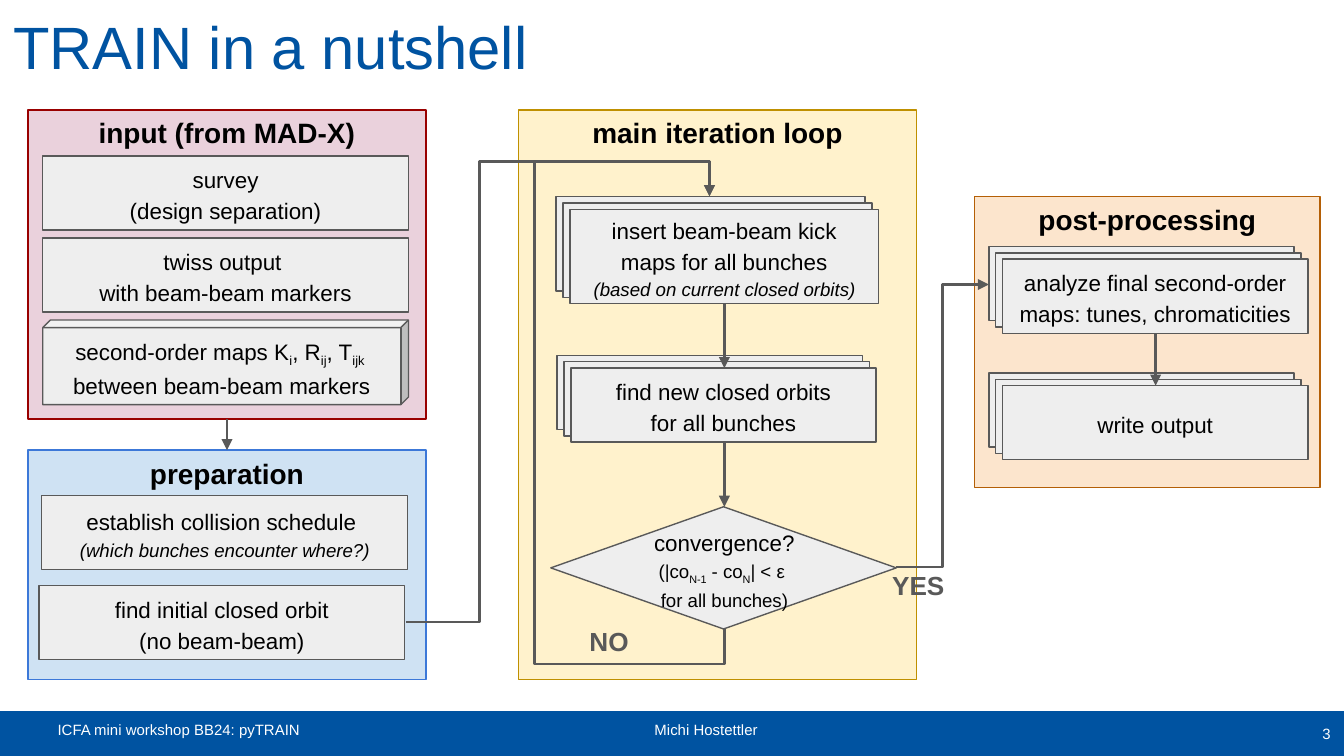
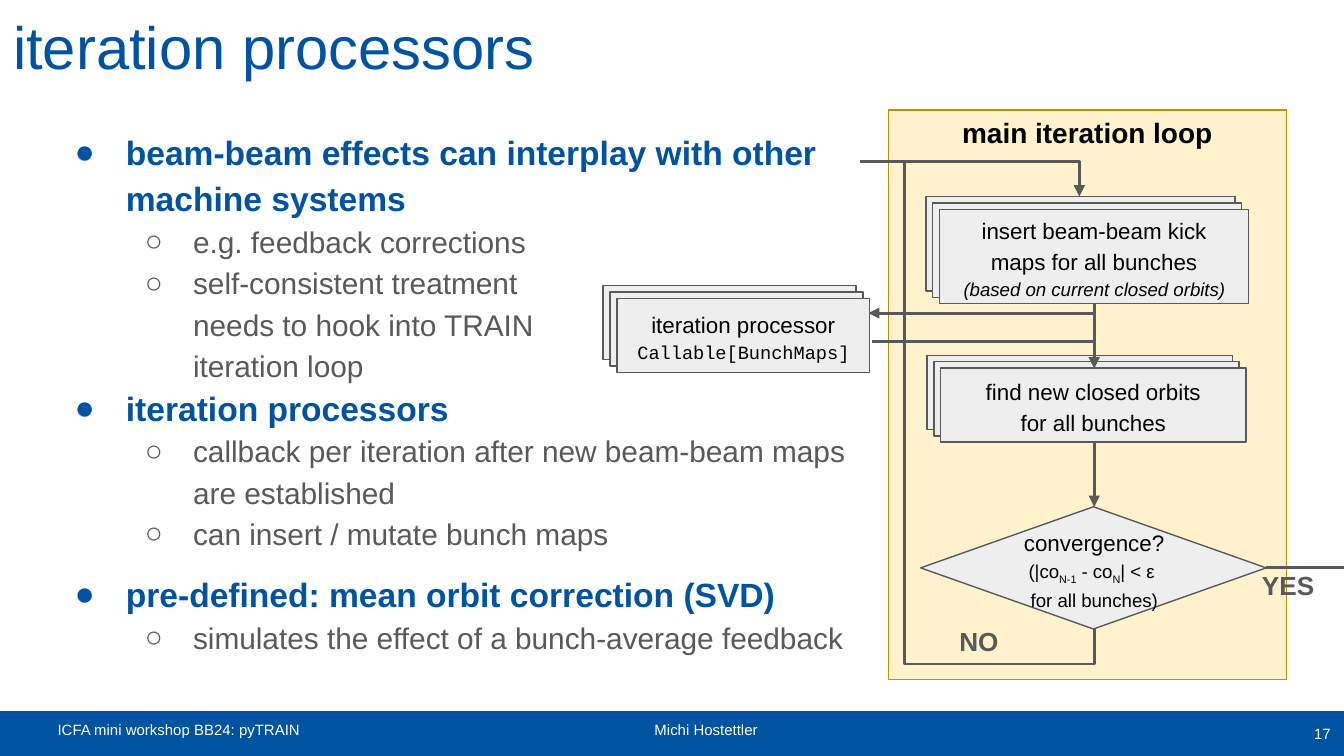
from copy import deepcopy
from dataclasses import dataclass

from lxml import etree
from pptx import Presentation
from pptx import util as u
from pptx.dml.color import RGBColor
from pptx.enum import shapes, text
from pptx.oxml.ns import qn

# Shared colours and fonts
BLUE = RGBColor(0x00, 0x53, 0xA1)
GREY = RGBColor(0x59, 0x59, 0x59)
BOX_FILL = RGBColor(0xEE, 0xEE, 0xEE)
BLACK = RGBColor(0, 0, 0)
WHITE = RGBColor(0xFF, 0xFF, 0xFF)
ROSE, DARK_RED = RGBColor(0xEA, 0xD1, 0xDC), RGBColor(0x99, 0, 0)
SKY, MID_BLUE = RGBColor(0xCF, 0xE2, 0xF3), RGBColor(0x3C, 0x78, 0xD8)
CREAM, GOLD = RGBColor(0xFF, 0xF2, 0xCC), RGBColor(0xBF, 0x90, 0)
PEACH, RUST = RGBColor(0xFC, 0xE5, 0xCD), RGBColor(0xB4, 0x5F, 0x06)
SANS, MONO = "Arial", "Courier New"

# Shared measures in centimetres
SLIDE_W, SLIDE_H = 25.4, 14.29
BAND_TOP, BAND_H = 13.46, 0.83
PANEL_W, PANEL_TOP, HEADING_H = 7.52, 2.08, 0.86
BOX_W, BOX_H = 6.91, 1.4
STACK_W = 5.77
STACK_STEP_X, STACK_STEP_Y = 0.13, 0.12
INSET = 0.25

LEFT, CENTER, RIGHT = text.PP_ALIGN.LEFT, text.PP_ALIGN.CENTER, text.PP_ALIGN.RIGHT
TOP, MIDDLE = text.MSO_ANCHOR.TOP, text.MSO_ANCHOR.MIDDLE
RECT = shapes.MSO_SHAPE.RECTANGLE


@dataclass
class Run:
    text: str
    size: float = 12
    color: RGBColor = BLACK
    bold: bool = False
    italic: bool = False
    baseline: int = 0
    font: str = SANS


def note(words):
    return Run(words, size=10, italic=True)


def sub(words, size=12):
    return Run(words, size=size, baseline=-25000)


def cm(*lengths):
    return [u.Cm(length) for length in lengths]


# Text
def add_runs(paragraph, runs):
    for item in runs:
        for number, line in enumerate(item.text.split("\n")):
            if number:
                paragraph.add_line_break()
                last = paragraph.runs[-1]._r.get_or_add_rPr()
                paragraph._p[-1].append(deepcopy(last))
            if not line:
                continue
            run = paragraph.add_run()
            run.text = line
            run.font.name, run.font.size = item.font, u.Pt(item.size)
            run.font.bold, run.font.italic = item.bold, item.italic
            run.font.color.rgb = item.color
            if item.baseline:
                run._r.get_or_add_rPr().set("baseline", str(item.baseline))


def write(shape, lines, align=CENTER, anchor=MIDDLE, spacing=None):
    """Each line is a paragraph: a string or a list of runs."""
    frame = shape.text_frame
    frame.word_wrap = True
    frame.vertical_anchor = anchor
    frame.margin_left = frame.margin_right = u.Cm(INSET)
    frame.margin_top = frame.margin_bottom = u.Cm(INSET)
    for number, line in enumerate(lines):
        paragraph = frame.add_paragraph() if number else frame.paragraphs[0]
        paragraph.alignment = align
        if spacing:
            paragraph.line_spacing = spacing
        add_runs(paragraph, [Run(line)] if isinstance(line, str) else line)


def label(slide, at, run, align=LEFT, anchor=TOP):
    write(slide.shapes.add_textbox(*cm(*at)), [[run]], align, anchor)


def bullet(paragraph, char, color, margin, indent):
    properties = paragraph._p.get_or_add_pPr()
    properties.set("marL", str(u.Cm(margin)))
    properties.set("indent", str(u.Cm(indent)))
    tint = etree.SubElement(properties, qn("a:buClr"))
    etree.SubElement(tint, qn("a:srgbClr")).set("val", str(color))
    etree.SubElement(properties, qn("a:buFont")).set("typeface", SANS)
    etree.SubElement(properties, qn("a:buChar")).set("char", char)


def topic(slide, top, height, heading, points):
    area = slide.shapes.add_textbox(*cm(0.86, top, 15.54, height))
    runs = [Run(heading, 18, BLUE, bold=True)] + [Run(point, 16, GREY) for point in points]
    write(area, [[run] for run in runs], LEFT, TOP, 1.15)
    first, *others = area.text_frame.paragraphs
    bullet(first, "●", BLUE, 1.27, -0.97)
    for paragraph in others:
        paragraph.level = 1
        bullet(paragraph, "○", GREY, 2.54, -0.91)


# Boxes
def box(slide, at, lines=(), kind=RECT, fill=BOX_FILL, line=GREY):
    shape = slide.shapes.add_shape(kind, *cm(*at))
    shape.shadow.inherit = False
    shape.fill.solid()
    shape.fill.fore_color.rgb = fill
    shape.line.color.rgb = line
    shape.line.width = u.Pt(0.75)
    if lines:
        write(shape, lines, spacing=1.15)
    return shape


def stack(slide, left, top, width, height, lines):
    """Three overlapping cards; left and top belong to the front one."""
    for depth in (2, 1, 0):
        at = (left - depth * STACK_STEP_X, top - depth * STACK_STEP_Y, width, height)
        box(slide, at, () if depth else lines)


def panel(slide, left, top, width, height, heading, fill, line):
    box(slide, (left, top, width, height), fill=fill, line=line)
    label(slide, (left, top, width, HEADING_H), Run(heading, 15, bold=True), CENTER, MIDDLE)


# Connectors
def route(slide, *points, head=True):
    """One connector through right-angled points, with its bends worked out."""
    (x1, y1), (x2, y2) = start, end = points[0], points[-1]
    segments = len(points) - 1
    bent = segments > 1
    upright = bent and points[1][0] == x1
    if upright:  # lay the box on its side, then turn it by 90 degrees
        mid_x, mid_y = (x1 + x2) / 2, (y1 + y2) / 2
        start, end = [(mid_x + y - mid_y, mid_y - x + mid_x) for x, y in (start, end)]
    kind = shapes.MSO_CONNECTOR.ELBOW if bent else shapes.MSO_CONNECTOR.STRAIGHT
    arrow = slide.shapes.add_connector(kind, *cm(*start, *end))
    arrow.line.color.rgb = GREY
    arrow.line.width = u.Pt(1.5)
    properties = arrow._element.spPr
    if upright:
        properties.find(qn("a:xfrm")).set("rot", "5400000")
    if bent:
        geometry = properties.find(qn("a:prstGeom"))
        geometry.set("prst", f"bentConnector{segments}")
        guides = geometry.find(qn("a:avLst"))
        if guides is None:
            guides = etree.SubElement(geometry, qn("a:avLst"))
        for number, point in enumerate(points[1:-2], 1):
            axis = (number + upright + 1) % 2
            share = (point[axis] - points[0][axis]) / (points[-1][axis] - points[0][axis])
            guide = etree.SubElement(guides, qn("a:gd"))
            guide.set("name", f"adj{number}")
            guide.set("fmla", f"val {round(share * 100000)}")
    if head:
        tail = etree.SubElement(arrow.line._get_or_add_ln(), qn("a:tailEnd"))
        tail.set("type", "triangle")
    etree.SubElement(properties, qn("a:effectLst"))


# Parts that both slides share
def new_slide(deck, title, number):
    slide = deck.slides.add_slide(deck.slide_layouts[6])
    box(slide, (0, BAND_TOP, SLIDE_W, BAND_H), fill=BLUE, line=BLUE)
    label(slide, (0.84, BAND_TOP, 10.62, BAND_H),
          Run("ICFA mini workshop BB24: pyTRAIN", 8, WHITE))
    label(slide, (12.12, BAND_TOP, 8.31, BAND_H), Run("Michi Hostettler", 8, WHITE))
    label(slide, (23.88, BAND_TOP, 1.52, BAND_H), Run(number, 8, WHITE), RIGHT, MIDDLE)
    label(slide, (0, 0, 25.15, 1.73), Run(title, 32, BLUE), LEFT, MIDDLE)
    return slide


def iteration_loop(slide, left):
    panel(slide, left, PANEL_TOP, PANEL_W, 10.77, "main iteration loop", CREAM, GOLD)
    stack(slide, left + 0.97, 3.96, 5.84, 1.78, [
        [Run("insert beam-beam kick maps for all bunches\n"),
         note("(based on current closed orbits)")]])
    stack(slide, left + 0.99, 6.96, STACK_W, BOX_H,
          ["find new closed orbits", "for all bunches"])

    # Convergence test
    box(slide, (left + 0.61, 9.58, 6.53, 2.31),
        kind=shapes.MSO_SHAPE.FLOWCHART_DECISION)
    question = slide.shapes.add_textbox(*cm(left + 0.69, 9.68, 6.4, 2.03))
    write(question, [
        "convergence?",
        [Run("(|co", 10), sub("N-1", 10), Run(" - co", 10), sub("N", 10),
         Run("| < ε \nfor all bunches)", 10)]], anchor=TOP, spacing=1.15)
    label(slide, (left + 1.09, 11.58, 1.75, 0.86), Run("NO", 14, GREY, bold=True))
    label(slide, (left + 6.81, 10.52, 1.75, 0.86), Run("YES", 14, GREY, bold=True))

    # Steps down and the way back
    middle, entry, back = left + 3.89, left + 3.61, left + 0.3
    route(slide, (middle, 5.74), (middle, 6.96))
    route(slide, (middle, 8.36), (middle, 9.58))
    route(slide, (middle, 11.89), (middle, 12.55), (back, 12.55),
          (back, 3.05), (entry, 3.05), (entry, 3.71))


def nutshell_slide(deck):
    slide = new_slide(deck, "TRAIN in a nutshell", "3")

    # Input
    panel(slide, 0.53, PANEL_TOP, PANEL_W, 5.84, "input (from MAD-X)", ROSE, DARK_RED)
    box(slide, (0.81, 2.95, BOX_W, BOX_H), ["survey", "(design separation)"])
    box(slide, (0.81, 4.5, BOX_W, BOX_H), ["twiss output \nwith beam-beam markers"])
    maps = box(slide, (0.81, 6.05, BOX_W, 1.6), [
        [Run("second-order maps K"), sub("i"), Run(", R"), sub("ij"), Run(", T"),
         sub("ijk \n"), Run("between beam-beam markers")]], kind=shapes.MSO_SHAPE.CUBE)
    maps.adjustments[0] = 0.09

    # Preparation
    panel(slide, 0.53, 8.51, PANEL_W, 4.34, "preparation", SKY, MID_BLUE)
    box(slide, (0.79, 9.37, BOX_W, BOX_H), [
        [Run("establish collision schedule \n"), note("(which bunches encounter where?)")]])
    box(slide, (0.74, 11.07, BOX_W, BOX_H), ["find initial closed orbit", "(no beam-beam)"])
    route(slide, (4.29, 7.92), (4.29, 8.51))

    # Main loop
    iteration_loop(slide, 9.8)
    route(slide, (7.67, 11.76), (9.07, 11.76), (9.07, 3.05), (13.41, 3.05), (13.41, 3.71))

    # Post-processing
    panel(slide, 18.42, 3.71, 6.53, 5.51, "post-processing", PEACH, RUST)
    stack(slide, 18.95, 4.9, STACK_W, BOX_H,
          ["analyze final second-order maps: tunes, chromaticities"])
    stack(slide, 18.95, 7.29, STACK_W, BOX_H, ["write output"])
    route(slide, (16.94, 10.72), (17.82, 10.72), (17.82, 5.38), (18.69, 5.38))
    route(slide, (21.84, 6.3), (21.84, 7.29))


def processors_slide(deck):
    slide = new_slide(deck, "iteration processors", "17")

    # Main loop with its entry and exit
    iteration_loop(slide, 16.79)
    route(slide, (16.26, 3.05), (20.4, 3.05), (20.4, 3.71))
    route(slide, (23.93, 10.72), (SLIDE_W, 10.72), head=False)

    # Processor hooked into the loop
    route(slide, (16.48, 6.45), (20.68, 6.45), (20.68, 6.96))
    route(slide, (20.68, 5.74), (20.68, 5.92), (16.41, 5.92))
    stack(slide, 11.66, 5.64, 4.78, BOX_H,
          ["iteration processor", [Run("Callable[BunchMaps]", 10, font=MONO)]])

    # Explanation
    topic(slide, 2.13, 10.82, "beam-beam effects can interplay with other machine systems", [
        "e.g. feedback corrections",
        "self-consistent treatment\nneeds to hook into TRAIN\niteration loop"])
    topic(slide, 6.96, 4.01, "iteration processors", [
        "callback per iteration after new beam-beam maps are established",
        "can insert / mutate bunch maps"])
    topic(slide, 10.49, 2.34, "pre-defined: mean orbit correction (SVD)", [
        "simulates the effect of a bunch-average feedback"])


def main():
    deck = Presentation()
    deck.slide_width, deck.slide_height = cm(SLIDE_W, SLIDE_H)
    nutshell_slide(deck)
    processors_slide(deck)
    deck.save("out.pptx")


if __name__ == "__main__":
    main()
